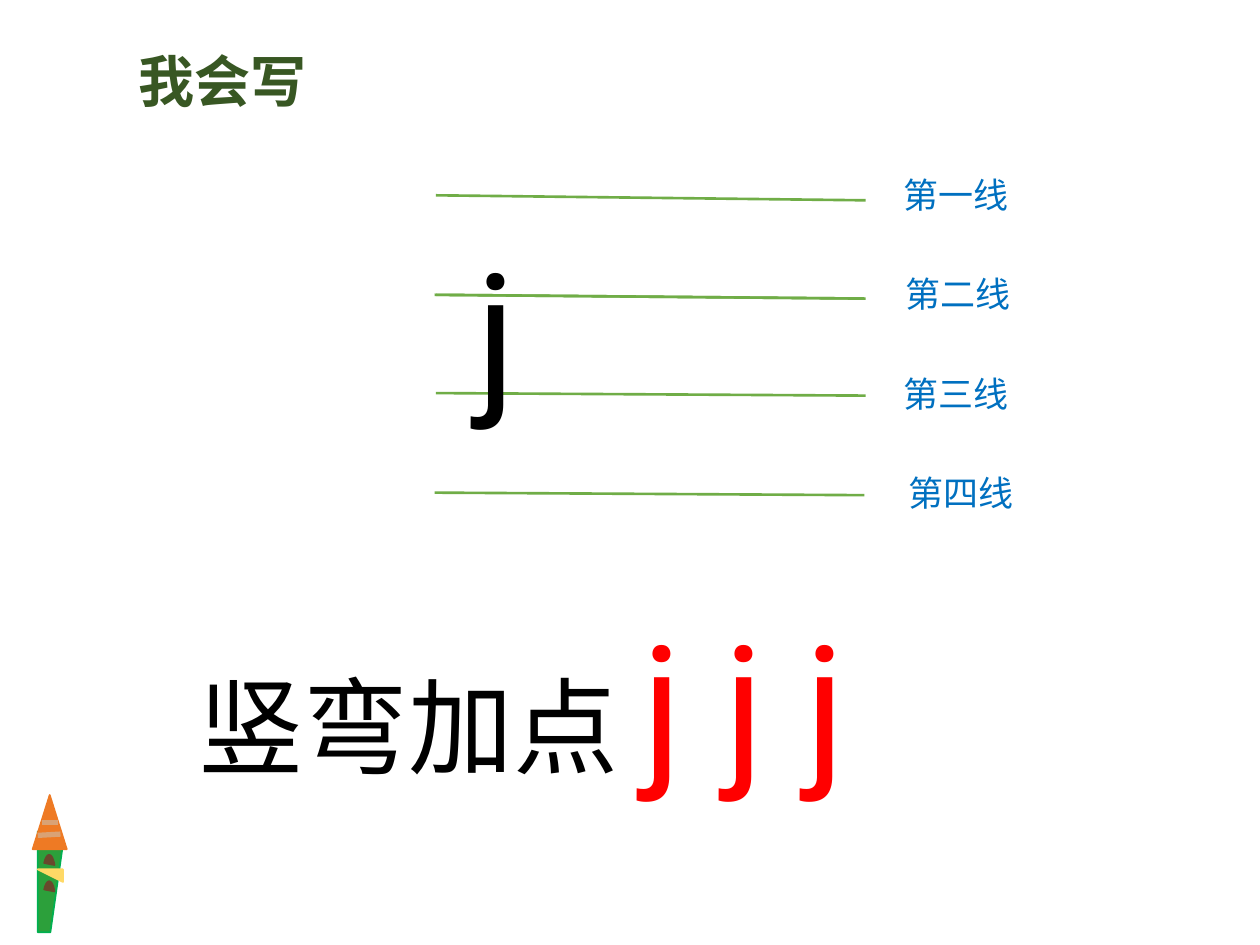
from lxml import etree
from pptx import Presentation
from pptx import util as u
from pptx.dml.color import RGBColor
from pptx.enum import shapes, text
from pptx.oxml.ns import qn

COLORS = {
    "title": "385723", "rule": "70AD47", "label": "0070C0",
    "letter": "000000", "practice": "FF0000",
    "body": "2CA03B", "body edge": "00B050", "tip": "EE7A24",
    "mark": "69482C", "band": "FFD966", "stripe": "D9A275",
}
CHINESE, LATIN = "Noto Sans CJK SC", "Roboto"

presentation = Presentation()
presentation.slide_width, presentation.slide_height = u.Inches(10), u.Inches(7.5)
slide = presentation.slides.add_slide(presentation.slide_layouts[6])

# Square grid: 100 columns by 75 rows
CELL = presentation.slide_width // 100


def add_line(start, end, color, width):
    points = [round(value * CELL) for value in (*start, *end)]
    line = slide.shapes.add_connector(shapes.MSO_CONNECTOR.STRAIGHT, *points)
    line.line.color.rgb = RGBColor.from_string(COLORS[color])
    line.line.width = u.Pt(width)
    etree.SubElement(line._element.spPr, qn("a:effectLst"))


def add_text(box, runs, **frame_format):
    """Add a text box; each run is (words, size, font name, color, bold)."""
    shape = slide.shapes.add_textbox(*[round(value * CELL) for value in box])
    frame = shape.text_frame
    for name, value in {"word_wrap": True, **frame_format}.items():
        setattr(frame, name, value)
    paragraph = frame.paragraphs[0]
    for words, size, font_name, color, bold in runs:
        run = paragraph.add_run()
        run.text = words
        for name, value in {"size": u.Pt(size), "name": font_name, "bold": bold}.items():
            setattr(run.font, name, value)
        run.font.color.rgb = RGBColor.from_string(COLORS[color])
        properties = run.font._element
        etree.SubElement(properties, qn("a:ea"), typeface=font_name)
    return paragraph


# Crayon in the corner
crayon = []
for points, fill, edge in [
    ([(3.3, 66.1), (4.9, 67.1), (4.3, 73.7), (3, 73.7)], "body", "body edge"),
    ([(3.3, 69.1), (4.6, 69.1), (4.6, 69.6), (3.2, 69.4)], "band", "band"),
]:
    builder = slide.shapes.build_freeform(*points[0], scale=CELL)
    builder.add_line_segments(points[1:], close=True)
    crayon.append((builder.convert_to_shape(), fill, edge))

for kind, box, color in [
    (shapes.MSO_SHAPE.ISOSCELES_TRIANGLE, (2.6, 63.1, 2.7, 4.3), "tip"),
    (shapes.MSO_SHAPE.CHORD, (2.6, 68.7, 2.6, 0.9), "mark"),
    (shapes.MSO_SHAPE.CHORD, (2.6, 70.8, 2.6, 0.9), "mark"),
]:
    shape = slide.shapes.add_shape(kind, *[round(value * CELL) for value in box])
    if kind == shapes.MSO_SHAPE.CHORD:
        shape.rotation = 90
        shape.adjustments[0], shape.adjustments[1] = 89.45, 132.13
    crayon.append((shape, color, color))

for shape, fill, edge in crayon:
    shape.shadow.inherit = False
    shape.fill.solid()
    shape.fill.fore_color.rgb = RGBColor.from_string(COLORS[fill])
    shape.line.color.rgb = RGBColor.from_string(COLORS[edge])
    shape.line.width = u.Pt(1)

add_line((3.3, 65.3), (4.6, 65.3), "stripe", 3)
add_line((3, 66.3), (4.8, 66.2), "stripe", 3)

# Title
title = add_text((9.9, 3.2, 15.5, 6.4), [("我会写", 32, CHINESE, "title", True)],
                 word_wrap=False)
title.alignment = text.PP_ALIGN.CENTER

# Four-line writing grid; the second line is drawn twice
for left, top, drop in [(34.6, 15.5, 0.4), (34.6, 23.4, 0.3), (34.5, 23.4, 0.3),
                        (34.6, 31.2, 0.2), (34.5, 39.1, 0.2)]:
    add_line((left, top), (left + 34.1, top + drop), "rule", 1.5)

LABEL_TOP, LABEL_PITCH = 13.3, 7.87
for row, (number, left) in enumerate(zip("一二三四", (70.7, 70.9, 70.7, 71.1))):
    add_text((left, LABEL_TOP + row * LABEL_PITCH, 13.1, 7.7),
             [(f"第{number}线", 20, CHINESE, "label", False)])

add_text((23.6, 17.5, 35.9, 33.3), [("j", 96, LATIN, "letter", False)],
         margin_left=u.Inches(1.42))

# Stroke rule and practice letters
add_text((14.8, 47, 79.7, 17.2), [("竖弯加点 ", 60, CHINESE, "letter", False),
                                  ("j j j", 96, LATIN, "practice", False)])

presentation.save("out.pptx")
